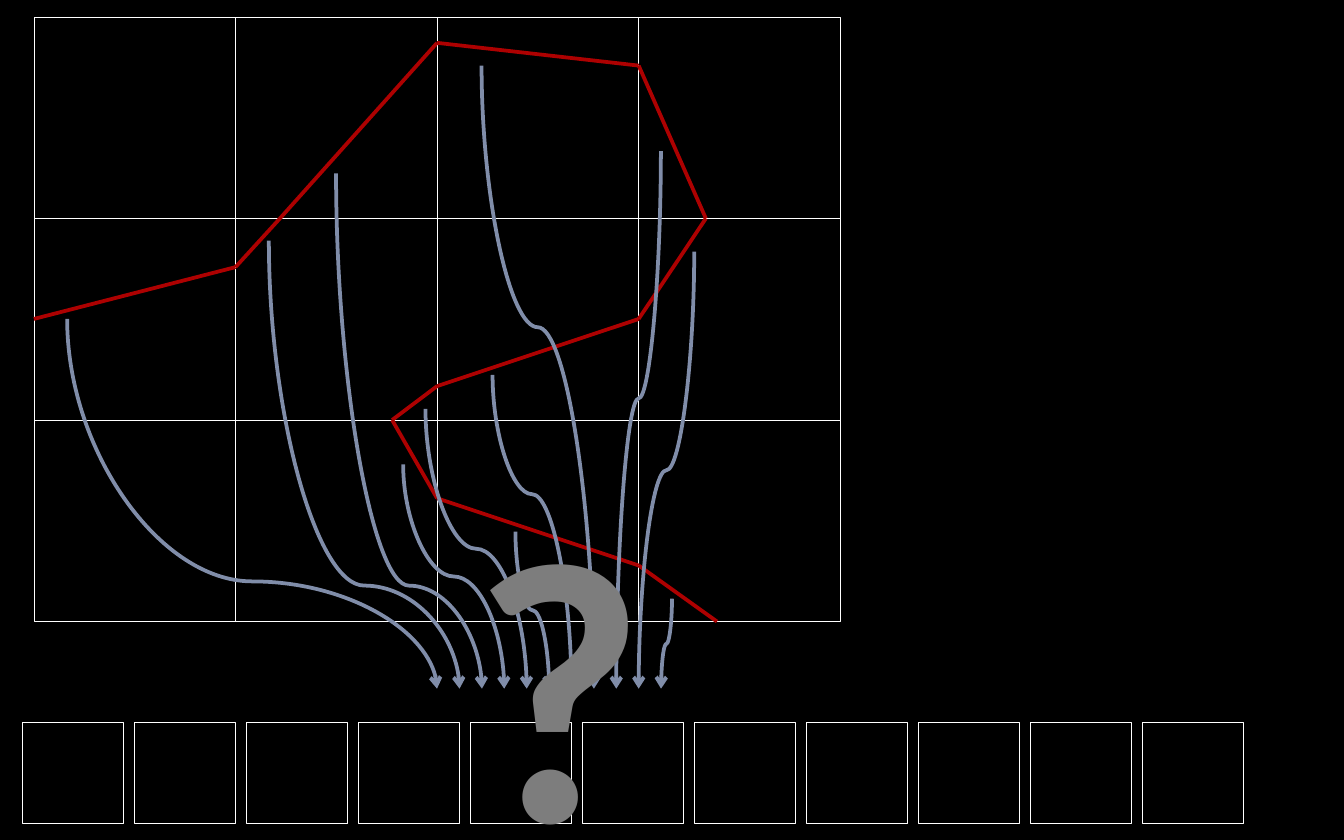
import pptx
import pptx.util
import pptx.dml.color
import pptx.enum.shapes
import pptx.enum.text
import pptx.oxml.ns
from lxml import etree
from pptx.util import Cm

RGBColor = pptx.dml.color.RGBColor
BLACK = RGBColor(0x00, 0x00, 0x00)
WHITE = RGBColor(0xFF, 0xFF, 0xFF)
RED = RGBColor(0xAD, 0x01, 0x01)
BLUE = RGBColor(0x80, 0x8D, 0xA9)
GRAY = RGBColor(0x7D, 0x7D, 0x7D)
OUTLINE = RGBColor(0xDD, 0xDD, 0xE1)

GRID_LEFT, GRID_TOP, CELL = 0.64, 0.32, 3.81
SLOT_LEFT, SLOT_TOP, SLOT, SLOT_STEP = 0.42, 13.65, 1.91, 12.7 / 6
ARROW_LEFT, ARROW_BOTTOM, ARROW_STEP = 8.26, 13.02, 2.54 / 6

CONTOUR = [
    (0.64, 6.03), (4.45, 5.05), (5.29, 4.13), (8.26, 0.81),
    (12.07, 1.24), (13.34, 4.13), (12.07, 6.03), (8.26, 7.3),
    (7.41, 7.94), (8.26, 9.42), (12.07, 10.69), (13.55, 11.75),
]
# Start of each arrow and the share of its height at which it bends
ARROWS = [
    (1.27, 6.03, 0.71), (5.08, 4.55, 0.77), (6.35, 3.28, 0.8),
    (7.62, 8.78, 0.5), (8.04, 7.73, 0.5), (9.74, 10.05, 0.5),
    (9.31, 7.09, 0.38), (9.1, 1.24, 0.42), (12.49, 2.86, 0.46),
    (13.12, 4.76, 0.5), (12.7, 11.32, 0.5),
]


def add_element(parent, tag, **attributes):
    return etree.SubElement(parent, pptx.oxml.ns.qn(tag), attributes)


class Canvas:
    font_name = "Calibri"
    thin = pptx.util.Pt(0.25)
    thick = pptx.util.Pt(2)

    def __init__(self, slide):
        self.slide = slide
        slide.background.fill.solid()
        slide.background.fill.fore_color.rgb = BLACK

    def square(self, left, top, size):
        shape = self.slide.shapes.add_shape(
            pptx.enum.shapes.MSO_SHAPE.RECTANGLE,
            Cm(left), Cm(top), Cm(size), Cm(size))
        shape.shadow.inherit = False
        shape.fill.background()
        shape.line.color.rgb = WHITE
        shape.line.width = self.thin

    def connector(self, kind, start, end, color):
        connector = self.slide.shapes.add_connector(
            kind, *(Cm(value) for value in (*start, *end)))
        connector.line.color.rgb = color
        connector.line.width = self.thick
        add_element(connector._element.spPr, "a:effectLst")
        return connector

    def line(self, start, end):
        self.connector(pptx.enum.shapes.MSO_CONNECTOR.STRAIGHT, start, end, RED)

    def curved_arrow(self, start, end, bend):
        """Draw an S-curve that leaves and arrives vertically, as a rotated connector."""
        middle_x, middle_y = (start[0] + end[0]) / 2, (start[1] + end[1]) / 2
        half_width = (end[1] - start[1]) / 2
        half_height = abs(end[0] - start[0]) / 2
        rightward = end[0] > start[0]
        if rightward:
            half_width = -half_width
        connector = self.connector(
            pptx.enum.shapes.MSO_CONNECTOR.CURVE,
            (middle_x - half_width, middle_y - half_height),
            (middle_x + half_width, middle_y + half_height), BLUE)
        properties = connector._element.spPr
        properties.xfrm.set("rot", str((270 if rightward else 90) * 60000))
        adjustments = properties.find(".//" + pptx.oxml.ns.qn("a:avLst"))
        add_element(adjustments, "a:gd", name="adj1",
                    fmla=f"val {round(bend * 100000)}")
        add_element(connector.line._get_or_add_ln(), "a:tailEnd", type="arrow")

    def outlined_text(self, text, left, top, width, height, size):
        box = self.slide.shapes.add_textbox(
            Cm(left), Cm(top), Cm(width), Cm(height))
        box.text_frame.word_wrap = True
        paragraph = box.text_frame.paragraphs[0]
        paragraph.text = text
        paragraph.alignment = pptx.enum.text.PP_ALIGN.CENTER
        font = paragraph.font
        font.name = self.font_name
        font.size = pptx.util.Pt(size)
        font.bold = True
        font.color.rgb = GRAY
        outline = etree.Element(pptx.oxml.ns.qn("a:ln"), w=str(pptx.util.Pt(1)))
        fill = add_element(outline, "a:solidFill")
        add_element(fill, "a:srgbClr", val=str(OUTLINE))
        paragraph._p.pPr.find(pptx.oxml.ns.qn("a:defRPr")).insert(0, outline)


def main():
    presentation = pptx.Presentation()
    presentation.slide_width = Cm(25.4)
    presentation.slide_height = Cm(15.88)
    canvas = Canvas(presentation.slides.add_slide(presentation.slide_layouts[6]))

    for row in range(3):
        for column in range(4):
            canvas.square(GRID_LEFT + column * CELL, GRID_TOP + row * CELL, CELL)
    for start, end in zip(CONTOUR, CONTOUR[1:]):
        canvas.line(start, end)
    for index, (x, y, bend) in enumerate(ARROWS):
        canvas.square(SLOT_LEFT + index * SLOT_STEP, SLOT_TOP, SLOT)
        canvas.curved_arrow(
            (x, y), (ARROW_LEFT + index * ARROW_STEP, ARROW_BOTTOM), bend)
    canvas.outlined_text("?", 8.69, 8.36, 3.3, 8.81, 200)

    presentation.save("out.pptx")


if __name__ == "__main__":
    main()
